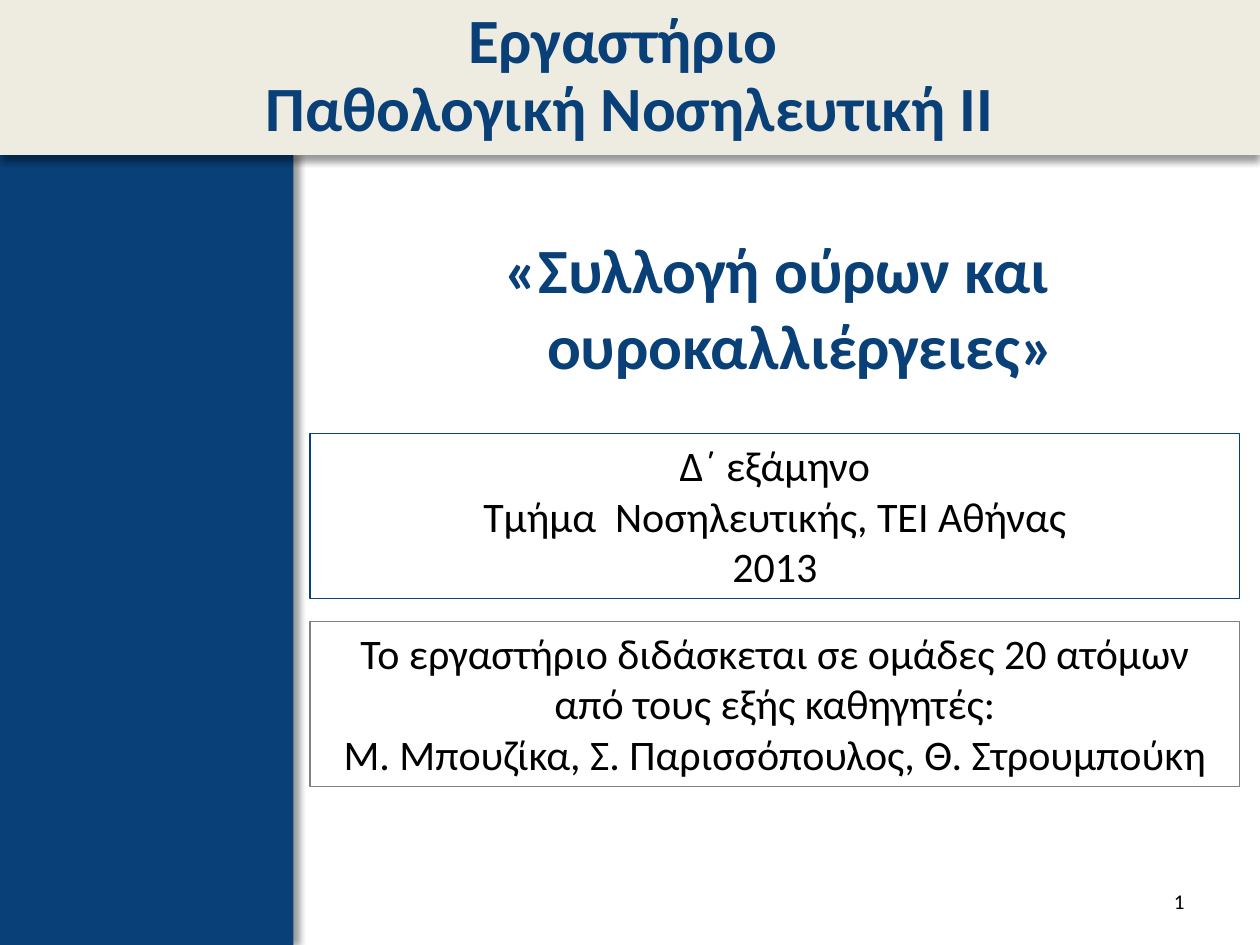
from dataclasses import dataclass

from lxml.etree import SubElement
from pptx import Presentation
from pptx.dml.color import RGBColor
from pptx.enum.shapes import MSO_SHAPE
from pptx.enum.text import MSO_ANCHOR, MSO_AUTO_SIZE, PP_ALIGN
from pptx.oxml.ns import qn
from pptx.util import Inches, Pt


@dataclass(frozen=True)
class Theme:
    font: str = "Calibri"
    navy: RGBColor = RGBColor(0x08, 0x40, 0x77)
    cream: RGBColor = RGBColor(0xEE, 0xEC, 0xE1)
    gray: RGBColor = RGBColor(0x80, 0x80, 0x80)
    black: RGBColor = RGBColor(0, 0, 0)
    title_size: int = 36
    body_size: int = 24
    number_size: int = 12


@dataclass(frozen=True)
class Box:
    left: float
    top: float
    width: float
    height: float

    def inner(self, left, top, width, height):
        """Box given in inches from this box's top left corner."""
        return Box(self.left + left, self.top + top, width, height)

    def place(self):
        return [Inches(side) for side in (self.left, self.top, self.width, self.height)]


THEME = Theme()
PAGE = Box(0, 0, 10, 7.5)
HEADER_HEIGHT = 1.23
SIDEBAR_WIDTH = 2.33


def add_panel(page, box, fill=None, line=None):
    panel = page.shapes.add_shape(MSO_SHAPE.RECTANGLE, *box.place())
    panel.shadow.inherit = False
    if fill is None:
        panel.fill.background()
    else:
        panel.fill.solid()
        panel.fill.fore_color.rgb = fill
    if line is None:
        panel.line.fill.background()
    else:
        panel.line.color.rgb = line
        panel.line.width = Pt(0.75)
    return panel


def cast_shadow(shape, degrees):
    effects = shape._element.spPr.find(qn("a:effectLst"))
    shadow = SubElement(effects, qn("a:outerShdw"), blurRad=str(Pt(4)),
                        dist=str(Pt(3)), dir=str(degrees * 60000),
                        algn="ctr", rotWithShape="0")
    color = SubElement(shadow, qn("a:srgbClr"), val=str(THEME.black))
    SubElement(color, qn("a:alpha"), val="40000")


def write(shape, lines, size, color, bold=False, align=PP_ALIGN.CENTER,
          anchor=MSO_ANCHOR.TOP):
    frame = shape.text_frame
    frame.word_wrap = True
    frame.vertical_anchor = anchor
    frame.text = "\n".join(lines)
    for para in frame.paragraphs:
        para.alignment = align
        para.font.name = THEME.font
        para.font.size = Pt(size)
        para.font.bold = bold
        para.font.color.rgb = color
    return frame


def add_sidebar(page, box):
    cast_shadow(add_panel(page, box, fill=THEME.navy), 0)


def add_header(page, box):
    header = add_panel(page, box, fill=THEME.cream)
    cast_shadow(header, 90)
    frame = write(header, ["Εργαστήριο \vΠαθολογική Νοσηλευτική ΙΙ"],
                  THEME.title_size, THEME.navy, bold=True, anchor=MSO_ANCHOR.MIDDLE)
    frame.paragraphs[0].line_spacing = 0.9


def add_content(page, box):
    # Topic with a hanging indent
    topic = page.shapes.add_textbox(*box.inner(0, 0.55, box.width, 1.5).place())
    frame = write(topic, ["«Συλλογή ούρων και ουροκαλλιέργειες»"],
                  THEME.title_size, THEME.navy, bold=True)
    indent = Inches(0.38)
    properties = frame.paragraphs[0]._p.get_or_add_pPr()
    properties.set("marL", str(indent))
    properties.set("indent", str(-indent))

    # Framed course details
    details = [
        (THEME.navy, ["Δ΄ εξάμηνο", "Τμήμα  Νοσηλευτικής, ΤΕΙ Αθήνας", "2013"]),
        (THEME.gray, ["Το εργαστήριο διδάσκεται σε ομάδες 20 ατόμων από τους εξής καθηγητές:",
                      "Μ. Μπουζίκα, Σ. Παρισσόπουλος, Θ. Στρουμπούκη"]),
    ]
    for row, (line, lines) in enumerate(details):
        place = box.inner(0.13, 2.21 + row * 1.49, 7.38, 1.31)
        panel = add_panel(page, place, line=line)
        frame = write(panel, lines, THEME.body_size, THEME.black)
        frame.auto_size = MSO_AUTO_SIZE.SHAPE_TO_FIT_TEXT


def add_page_number(page, box):
    number = page.shapes.add_textbox(*box.place())
    write(number, ["1"], THEME.number_size, THEME.black,
          align=PP_ALIGN.RIGHT, anchor=MSO_ANCHOR.MIDDLE)


def main():
    deck = Presentation()
    deck.slide_width, deck.slide_height = Inches(PAGE.width), Inches(PAGE.height)
    page = deck.slides.add_slide(deck.slide_layouts[6])
    body_height = PAGE.height - HEADER_HEIGHT
    add_sidebar(page, PAGE.inner(0, HEADER_HEIGHT, SIDEBAR_WIDTH, body_height))
    add_content(page, PAGE.inner(SIDEBAR_WIDTH, HEADER_HEIGHT,
                                 PAGE.width - SIDEBAR_WIDTH, body_height))
    add_header(page, PAGE.inner(0, 0, PAGE.width, HEADER_HEIGHT))
    add_page_number(page, PAGE.inner(7.17, 6.95, 2.33, 0.4))
    deck.save("out.pptx")


if __name__ == "__main__":
    main()
